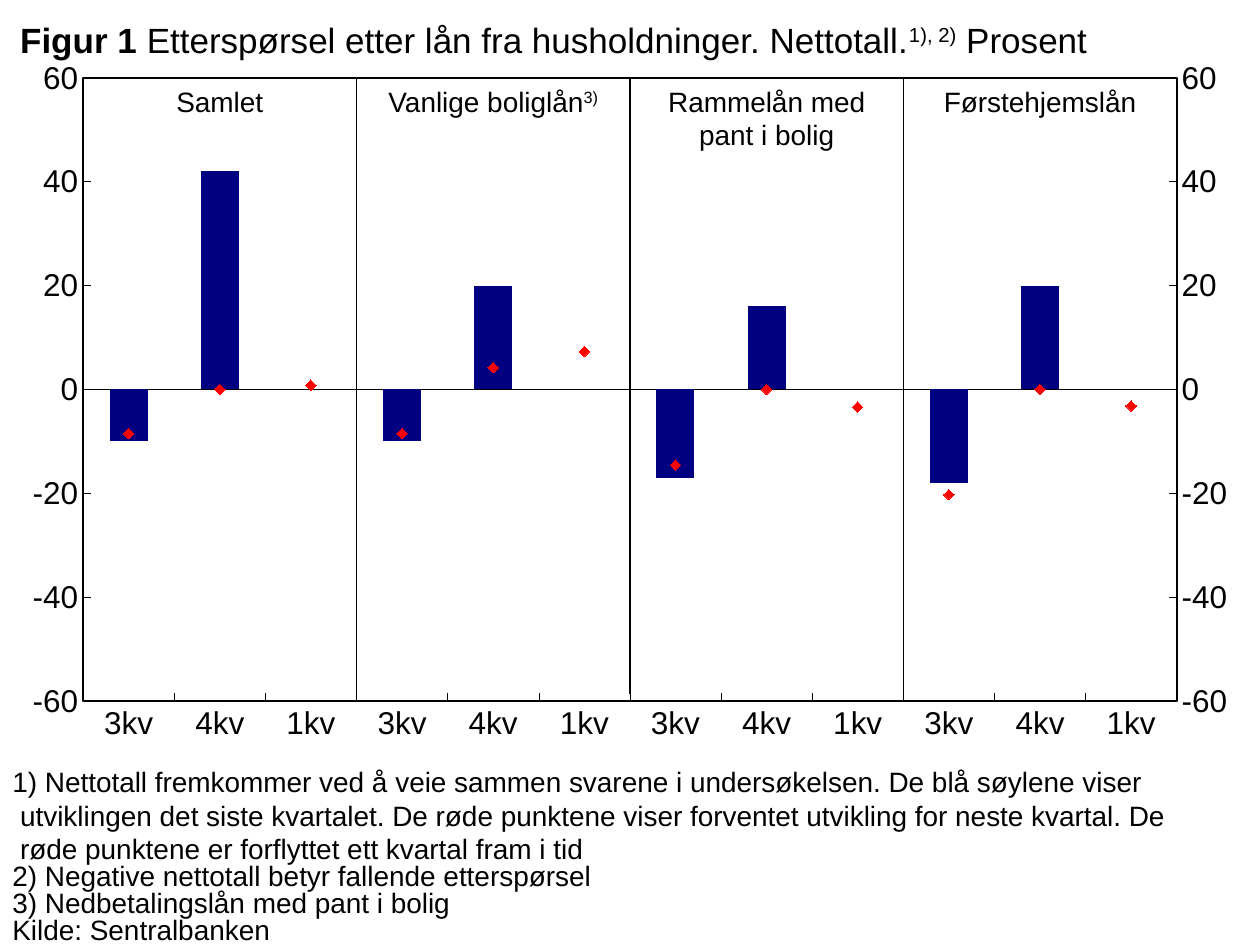
"""Builds a slide on household loan demand with a four-panel column and marker chart."""
from copy import deepcopy

from lxml import etree
from pptx import Presentation
from pptx.chart.data import CategoryChartData
from pptx.dml.color import RGBColor
from pptx.enum.chart import XL_CHART_TYPE, XL_MARKER_STYLE, XL_TICK_LABEL_POSITION, XL_TICK_MARK
from pptx.enum.shapes import MSO_CONNECTOR
from pptx.enum.text import MSO_ANCHOR, PP_ALIGN
from pptx.oxml import parse_xml
from pptx.util import Inches, Pt

COLUMNS = XL_CHART_TYPE.COLUMN_CLUSTERED
DIAMOND = XL_MARKER_STYLE.DIAMOND
NO_LABELS = XL_TICK_LABEL_POSITION.NONE
TICK_IN, TICK_NONE = XL_TICK_MARK.INSIDE, XL_TICK_MARK.NONE
STRAIGHT = MSO_CONNECTOR.STRAIGHT
BOTTOM, TOP = MSO_ANCHOR.BOTTOM, MSO_ANCHOR.TOP
LEFT, CENTER = PP_ALIGN.LEFT, PP_ALIGN.CENTER

COLORS = {"ink": "000000", "column": "000080", "expected": "FF0000"}
FONT = "Arial"
SLIDE_W, SLIDE_H = 10, 7.5
CHART_TOP, CHART_H = 0.47, 5.71
PLOT = {"x": 0.066, "y": 0.026, "w": 0.868, "h": 0.866}
PLOT_LEFT = PLOT["x"] * SLIDE_W
PANEL_W = PLOT["w"] * SLIDE_W / 4
PANEL_TOP, PANEL_BOTTOM = 0.62, 5.51
QUARTERS = ["3kv", "4kv", "1kv"]
PANELS = [
    ([("Samlet", {})], [-10, 42, None], [-8.5, 0, 0.8]),
    ([("Vanlige boliglån", {}), ("3)", {"raised": True})], [-10, 20, None], [-8.5, 4.2, 7.3]),
    ([("Rammelån med pant i bolig", {})], [-17, 16, None], [-14.6, 0, -3.4]),
    ([("Førstehjemslån", {})], [-18, 20, None], [-20.3, 0, -3.2]),
]
TITLE = [
    ("Figur 1", {"bold": True}),
    (" Etterspørsel etter lån fra husholdninger. Nettotall.", {}),
    ("1), 2)", {"raised": True}),
    (" Prosent", {}),
]
NOTES = [
    ("1) Nettotall fremkommer ved å veie sammen svarene i undersøkelsen. De blå søylene viser", 1),
    (" utviklingen det siste kvartalet. De røde punktene viser forventet utvikling for neste kvartal. De", 1),
    (" røde punktene er forflyttet ett kvartal fram i tid", 1),
    ("2) Negative nettotall betyr fallende etterspørsel", 0.8),
    ("3) Nedbetalingslån med pant i bolig", 0.8),
    ("Kilde: Sentralbanken", 0.8),
]
C_NS = "http://schemas.openxmlformats.org/drawingml/2006/chart"
A_NS = "http://schemas.openxmlformats.org/drawingml/2006/main"
NSMAP = f'xmlns:c="{C_NS}" xmlns:a="{A_NS}"'


def rgb(name):
    """Return the named palette colour."""
    return RGBColor.from_string(COLORS[name])


def write_text(paragraph, runs, size=16, align=LEFT, spacing=1):
    """Fill a paragraph with runs given as (text, format) pairs."""
    paragraph.alignment, paragraph.line_spacing = align, spacing
    for text, style in runs:
        run = paragraph.add_run()
        run.text = text
        run.font.name, run.font.size = FONT, Pt(size)
        run.font.bold = style.get("bold", False)
        run.font.color.rgb = rgb("ink")
        if style.get("raised"):
            run.font._element.set("baseline", "30000")


def add_text_frame(slide, left, top, width, height):
    """Add a wrapping text box and return its frame."""
    frame = slide.shapes.add_textbox(*map(Inches, (left, top, width, height))).text_frame
    frame.word_wrap, frame.vertical_anchor = True, TOP
    return frame


def add_title(slide):
    """Place and fill the title placeholder."""
    title = slide.shapes.title
    title.left, title.top, title.width, title.height = map(Inches, (0.06, 0.06, 8.91, 0.47))
    title.text_frame.vertical_anchor = BOTTOM
    write_text(title.text_frame.paragraphs[0], TITLE, size=20)


def add_panel_heading(slide, index, heading):
    """Centre a heading at the top of one panel of the chart."""
    frame = add_text_frame(slide, PLOT_LEFT + index * PANEL_W, PANEL_TOP, PANEL_W, 0.37)
    write_text(frame.paragraphs[0], heading, align=CENTER)


def add_divider(slide, index):
    """Draw the vertical line at the left edge of a panel."""
    x = Inches(PLOT_LEFT + index * PANEL_W)
    divider = slide.shapes.add_connector(STRAIGHT, x, Inches(PANEL_BOTTOM), x, Inches(PANEL_TOP))
    divider.line.color.rgb, divider.line.width = rgb("ink"), Pt(0.75)
    etree.SubElement(divider._element.spPr, f"{{{A_NS}}}effectLst")


def style_axis(axis, tick):
    """Give an axis its ticks, line and label font."""
    axis.has_major_gridlines = False
    axis.major_tick_mark, axis.minor_tick_mark = tick, TICK_NONE
    axis.format.line.color.rgb, axis.format.line.width = rgb("ink"), Pt(0.25)
    font = axis.tick_labels.font
    font.name, font.size, font.color.rgb = FONT, Pt(18), rgb("ink")


def copy_axis(axis, axis_id, cross_id, **settings):
    """Insert a secondary copy of an axis with changed settings."""
    twin = deepcopy(axis)
    for tag, value in dict(settings, axId=axis_id, crossAx=cross_id).items():
        twin.find(f"{{{C_NS}}}{tag}").set("val", value)
    axis.getparent().findall(f"{{{C_NS}}}valAx")[-1].addnext(twin)


def move_to_markers(chart):
    """Move the expectation series to a marker plot on secondary axes."""
    columns = chart.plots[0]._element
    markers = parse_xml(
        f'<c:lineChart {NSMAP}><c:grouping val="standard"/><c:varyColors val="0"/>'
        '<c:marker val="1"/><c:axId val="5001"/><c:axId val="5002"/></c:lineChart>')
    for series in list(chart.plots[0].series)[len(PANELS):]:
        element = series._element
        for flag in element.findall(f"{{{C_NS}}}invertIfNegative"):
            element.remove(flag)
        markers.find(f"{{{C_NS}}}marker").addprevious(element)
    columns.addnext(markers)
    copy_axis(chart.category_axis._element, "5001", "5002",
              crosses="min", tickLblPos="nextTo", majorTickMark="in")
    copy_axis(chart.value_axis._element, "5002", "5001", crosses="max", axPos="r")
    for series in chart.plots[1].series:
        series.smooth = False
        series.format.line.fill.background()
        series.marker.style, series.marker.size = DIAMOND, 6
        series.marker.format.fill.solid()
        series.marker.format.fill.fore_color.rgb = rgb("expected")
        series.marker.format.line.color.rgb = rgb("expected")


def frame_plot(chart):
    """Fix the inner plot area and outline it."""
    area = chart.plots[0]._element.getparent()
    for layout in area.findall(f"{{{C_NS}}}layout"):
        area.remove(layout)
    shares = "".join(f'<c:{key} val="{share}"/>' for key, share in PLOT.items())
    area.insert(0, parse_xml(
        f'<c:layout {NSMAP}><c:manualLayout><c:layoutTarget val="inner"/>'
        f'<c:xMode val="edge"/><c:yMode val="edge"/>{shares}</c:manualLayout></c:layout>'))
    area.append(parse_xml(
        f'<c:spPr {NSMAP}><a:noFill/><a:ln w="12700"><a:solidFill>'
        f'<a:srgbClr val="{COLORS["ink"]}"/></a:solidFill></a:ln></c:spPr>'))


def add_demand_chart(slide):
    """Add reported demand as columns and expected demand as markers."""
    data = CategoryChartData()
    data.categories = QUARTERS * len(PANELS)
    for part in (1, 2):
        for index, panel in enumerate(PANELS):
            before, after = [None] * 3 * index, [None] * 3 * (len(PANELS) - 1 - index)
            data.add_series(f"Series {(part - 1) * len(PANELS) + index + 1}",
                            before + panel[part] + after)
    place = map(Inches, (0, CHART_TOP, SLIDE_W, CHART_H))
    chart = slide.shapes.add_chart(COLUMNS, *place, data).chart
    chart.has_legend = chart.has_title = False
    chart.font.name, chart.font.size, chart.font.color.rgb = FONT, Pt(18), rgb("ink")
    columns = chart.plots[0]
    columns.gap_width, columns.overlap, columns.vary_by_categories = 140, 100, False
    style_axis(chart.category_axis, TICK_NONE)
    chart.category_axis.tick_label_position = NO_LABELS
    values = chart.value_axis
    style_axis(values, TICK_IN)
    values.minimum_scale, values.maximum_scale, values.major_unit = -60, 60, 20
    move_to_markers(chart)
    for series in columns.series:
        series.format.fill.solid()
        series.format.fill.fore_color.rgb = rgb("column")
        series.invert_if_negative = False
    frame_plot(chart)


def add_notes(slide):
    """Write the footnotes and the source under the chart."""
    frame = add_text_frame(slide, 0, 6.02, SLIDE_W, 1.48)
    for index, (note, spacing) in enumerate(NOTES):
        paragraph = frame.add_paragraph() if index else frame.paragraphs[0]
        write_text(paragraph, [(note, {})], spacing=spacing)


def main():
    """Build and save the slide."""
    deck = Presentation()
    deck.slide_width, deck.slide_height = Inches(SLIDE_W), Inches(SLIDE_H)
    slide = deck.slides.add_slide(deck.slide_layouts[5])
    add_demand_chart(slide)
    add_title(slide)
    for index, panel in enumerate(PANELS):
        add_panel_heading(slide, index, panel[0])
        if index:
            add_divider(slide, index)
    add_notes(slide)
    deck.save("out.pptx")


if __name__ == "__main__":
    main()
